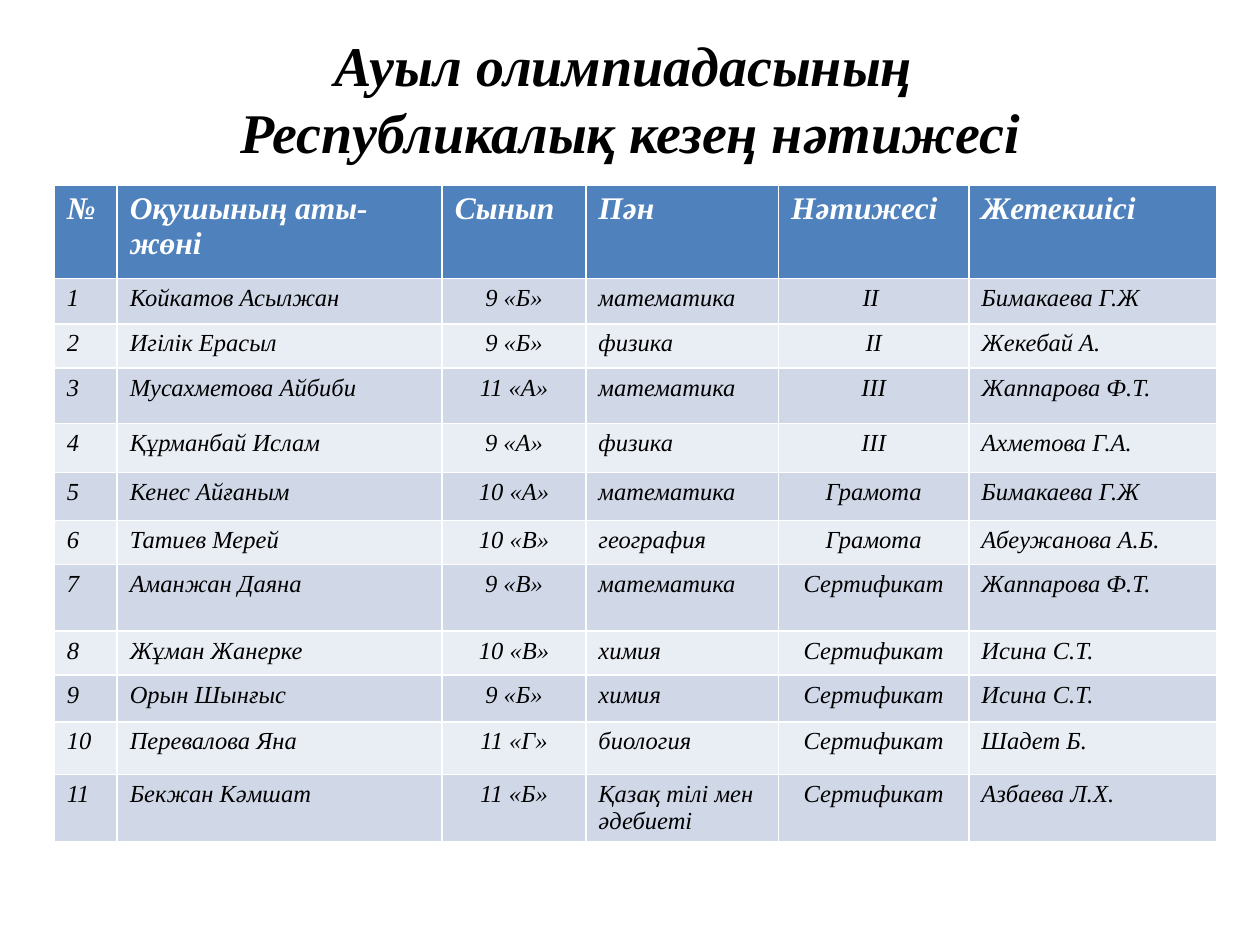
"""Build a slide with the national results of the rural school olympiad."""

from dataclasses import astuple, dataclass

from pptx import Presentation
from pptx.dml.color import RGBColor
from pptx.enum.text import MSO_ANCHOR as Anchor, PP_ALIGN as Align
from pptx.util import Inches, Pt

FONT = "Times New Roman"
COLORS = {
    "header": "4F81BD",
    "odd": "D0D8E8",
    "even": "E9EDF4",
    "text": "000000",
    "header_text": "FFFFFF",
}


@dataclass(frozen=True)
class Column:
    heading: str
    width: float
    align: Align = Align.LEFT


@dataclass(frozen=True)
class Result:
    student: str
    grade: str
    subject: str
    award: str
    teacher: str


COLUMNS = [
    Column("№", 0.5),
    Column("Оқушының аты-жөні", 2.58),
    Column("Сынып", 1.14, Align.CENTER),
    Column("Пән", 1.53),
    Column("Нәтижесі", 1.51, Align.CENTER),
    Column("Жетекшісі", 1.97),
]
ROW_HEIGHTS = [0.74, 0.36, 0.35, 0.44, 0.39, 0.38, 0.35, 0.53, 0.35, 0.37, 0.42, 0.53]
RESULTS = [
    Result("Койкатов Асылжан", "9 «Б»", "математика", "ІІ ", "Бимакаева Г.Ж"),
    Result("Игілік Ерасыл", "9 «Б»", "физика", "ІІ", "Жекебай А."),
    Result("Мусахметова Айбиби", "11 «А»", "математика", "ІІІ", "Жаппарова Ф.Т."),
    Result("Құрманбай Ислам", "9 «А»", "физика", "ІІІ", "Ахметова Г.А."),
    Result("Кенес Айғаным", "10 «А»", "математика", "Грамота", "Бимакаева Г.Ж"),
    Result("Татиев Мерей", "10 «В»", "география", "Грамота", "Абеужанова А.Б."),
    Result("Аманжан Даяна", "9 «В»", "математика", "Сертификат", "Жаппарова Ф.Т."),
    Result("Жұман Жанерке", "10 «В»", "химия", "Сертификат", "Исина С.Т."),
    Result("Орын Шынғыс", "9 «Б»", "химия", "Сертификат", "Исина С.Т."),
    Result("Перевалова Яна", "11 «Г»", "биология", "Сертификат", "Шадет Б."),
    Result("Бекжан Кәмшат", "11 «Б»", "Қазақ тілі мен әдебиеті", "Сертификат", "Азбаева Л.Х."),
]


def format_paragraph(paragraph, size: float, color: str, bold: bool, align: Align) -> None:
    """Apply the slide's italic type to a paragraph."""
    paragraph.alignment = align
    font = paragraph.font
    font.name, font.size = FONT, Pt(size)
    font.bold, font.italic = bold, True
    font.color.rgb = RGBColor.from_string(COLORS[color])


def fill_cell(cell, text: str, fill: str, size: float, color: str, bold: bool, align: Align) -> None:
    """Write a table cell and colour its background."""
    cell.text = text
    cell.fill.solid()
    cell.fill.fore_color.rgb = RGBColor.from_string(COLORS[fill])
    format_paragraph(cell.text_frame.paragraphs[0], size, color, bold, align)


def add_title(slide) -> None:
    """Place the two-line title."""
    title = slide.shapes.title
    title.left, title.top = Inches(0.51), Inches(0)
    title.width, title.height = Inches(8.99), Inches(1.55)
    frame = title.text_frame
    frame.text = "Ауыл олимпиадасының \vРеспубликалық кезең нәтижесі"
    frame.vertical_anchor = Anchor.MIDDLE
    format_paragraph(frame.paragraphs[0], 32, "text", True, Align.CENTER)


def add_results_table(slide) -> None:
    """Draw the numbered table of results."""
    table = slide.shapes.add_table(
        len(ROW_HEIGHTS), len(COLUMNS), Inches(0.43), Inches(1.47),
        Inches(sum(column.width for column in COLUMNS)), Inches(sum(ROW_HEIGHTS)),
    ).table
    for row, height in zip(table.rows, ROW_HEIGHTS):
        row.height = Inches(height)
    for index, column in enumerate(COLUMNS):
        table.columns[index].width = Inches(column.width)
        fill_cell(table.cell(0, index), column.heading, "header", 18, "header_text", True, Align.LEFT)
    for number, result in enumerate(RESULTS, start=1):
        fill = "odd" if number % 2 else "even"
        for index, text in enumerate((str(number), *astuple(result))):
            fill_cell(table.cell(number, index), text, fill, 14, "text", False, COLUMNS[index].align)


def main() -> None:
    """Create and save the presentation."""
    presentation = Presentation()
    presentation.slide_width, presentation.slide_height = Inches(10), Inches(7.5)
    slide = presentation.slides.add_slide(presentation.slide_layouts.get_by_name("Title Only"))
    add_title(slide)
    add_results_table(slide)
    presentation.save("out.pptx")


if __name__ == "__main__":
    main()
